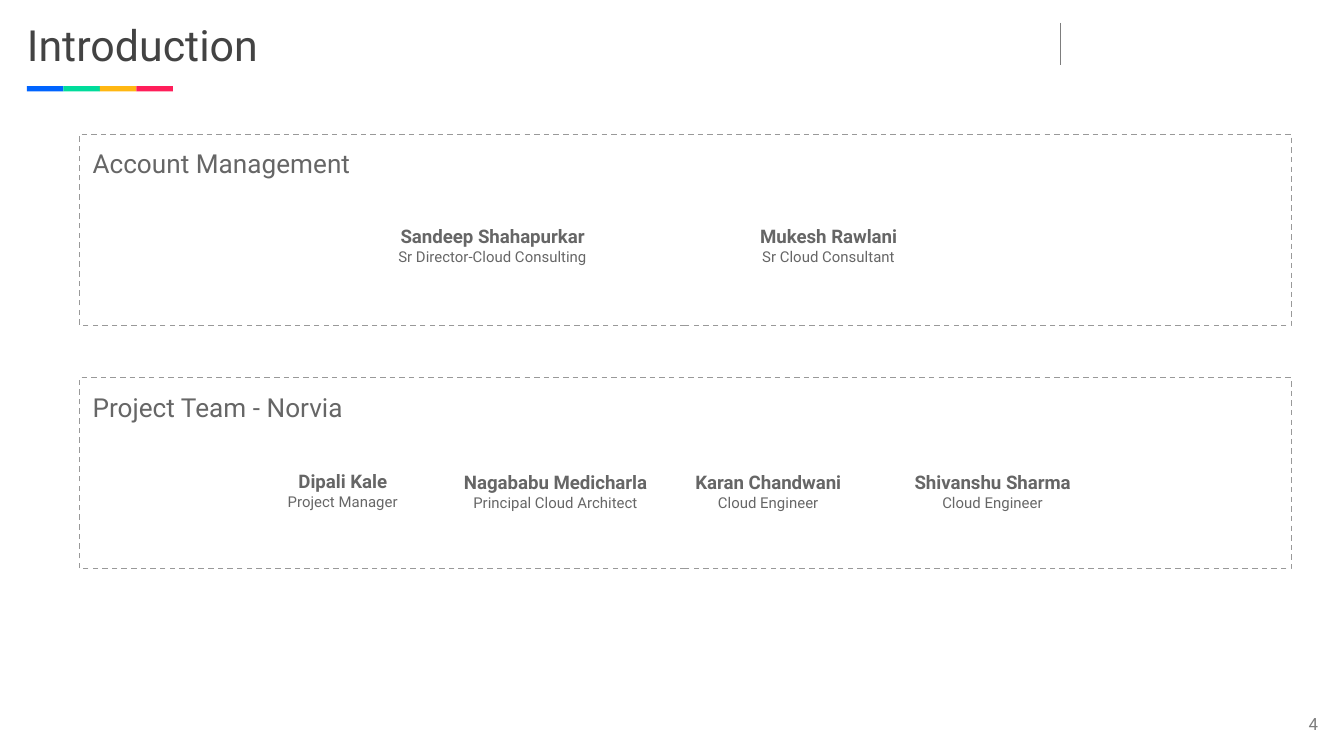
import pptx
import pptx.dml.color
import pptx.enum.dml
import pptx.enum.shapes
import pptx.enum.text
import pptx.util
import lxml.etree

Cm = pptx.util.Cm
Pt = pptx.util.Pt
RGB = pptx.dml.color.RGBColor.from_string
ALIGN = pptx.enum.text.PP_ALIGN
ANCHOR = pptx.enum.text.MSO_ANCHOR
RECTANGLE = pptx.enum.shapes.MSO_SHAPE.RECTANGLE

COLORS = {
    "title": "434343",
    "body": "666666",
    "frame": "999999",
    "muted": "7D7D7D",
    "blue": "0064FF",
    "green": "00DC9B",
    "yellow": "FFB712",
    "red": "FF1E5A",
}


def write_text(shape, lines, color, align=ALIGN.LEFT, anchor=ANCHOR.TOP, margin=0.25):
    frame = shape.text_frame
    frame.word_wrap = True
    frame.vertical_anchor = anchor
    frame.margin_left = frame.margin_right = Cm(margin)
    frame.margin_top = frame.margin_bottom = Cm(margin)
    frame.text = "\n".join(text for text, size, bold in lines)
    for paragraph, (text, size, bold) in zip(frame.paragraphs, lines):
        paragraph.alignment = align
        font = paragraph.runs[0].font
        font.name = "Roboto"
        font.size = Pt(size)
        font.bold = bold
        font.color.rgb = RGB(COLORS[color])


deck = pptx.Presentation()
deck.slide_width = Cm(25.4)
deck.slide_height = Cm(14.29)
slide = deck.slides.add_slide(deck.slide_layouts[6])
shapes = slide.shapes

divider = shapes.add_connector(
    pptx.enum.shapes.MSO_CONNECTOR.STRAIGHT, Cm(20.04), Cm(0.43), Cm(20.04), Cm(1.22)
)
divider.line.color.rgb = RGB(COLORS["muted"])
divider.line.width = Pt(0.75)
lxml.etree.SubElement(
    divider.line._get_or_add_ln().getparent(), pptx.oxml.ns.qn("a:effectLst")
)

for index, accent in enumerate(["blue", "green", "yellow", "red"]):
    stripe = shapes.add_shape(
        RECTANGLE, Cm(0.51 + index * 0.69), Cm(1.63), Cm(0.69), Cm(0.1)
    )
    stripe.shadow.inherit = False
    stripe.fill.solid()
    stripe.fill.fore_color.rgb = RGB(COLORS[accent])
    stripe.line.fill.background()

page_number = shapes.add_textbox(Cm(23.39), Cm(13.23), Cm(1.52), Cm(0.64))
write_text(page_number, [("4", 9, False)], "muted", ALIGN.RIGHT, ANCHOR.BOTTOM, 0)
page_number.text_frame.paragraphs[0].line_spacing = 0.9

title = shapes.add_textbox(Cm(0), Cm(-0.05), Cm(16.38), Cm(1.78))
write_text(title, [("Introduction", 23, False)], "title", anchor=ANCHOR.MIDDLE)
title.text_frame.margin_left = Cm(0.51)

teams = [
    ("Account Management", 2.54, [
        ("Sandeep Shahapurkar", "Sr Director-Cloud Consulting", 7.01, 4.01),
        ("Mukesh Rawlani", "Sr Cloud Consultant", 13.36, 4.01),
    ]),
    ("Project Team - Norvia", 7.14, [
        ("Dipali Kale", "Project Manager", 4.18, 8.63),
        ("Nagababu Medicharla", "Principal Cloud Architect", 8.2, 8.66),
        ("Karan Chandwani", "Cloud Engineer", 12.22, 8.66),
        ("Shivanshu Sharma", "Cloud Engineer", 16.46, 8.66),
    ]),
]

for team, team_top, members in teams:
    panel = shapes.add_shape(RECTANGLE, Cm(1.5), Cm(team_top), Cm(22.91), Cm(3.61))
    panel.shadow.inherit = False
    panel.fill.background()
    panel.line.color.rgb = RGB(COLORS["frame"])
    panel.line.width = Pt(0.75)
    panel.line.dash_style = pptx.enum.dml.MSO_LINE.DASH
    write_text(panel, [(team, 14, False)], "body")

    for name, role, left, top in members:
        member = shapes.add_textbox(Cm(left), Cm(top), Cm(4.6), Cm(1.73))
        write_text(member, [(name, 10, True), (role, 8, False)], "body", ALIGN.CENTER)

deck.save("out.pptx")
